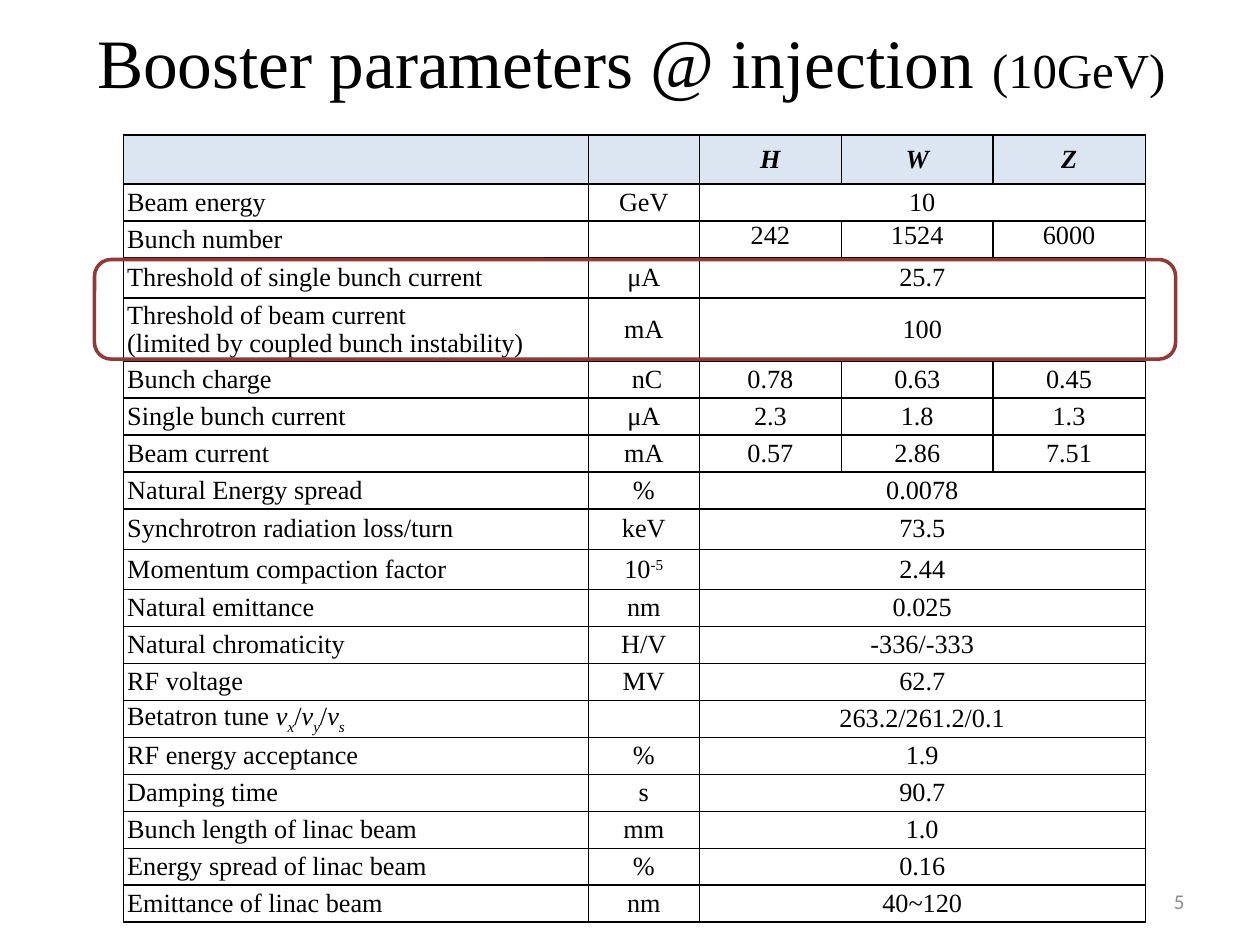
"""Build the slide of booster parameters at injection."""
from lxml import etree
from pptx import Presentation, util as u
from pptx.dml.color import RGBColor
from pptx.enum import shapes, text
from pptx.oxml.ns import qn

BLACK = RGBColor(0, 0, 0)
GREY = RGBColor(0x8C, 0x8C, 0x8C)
PALE = RGBColor(0xDC, 0xE6, 0xF2)
RED = RGBColor(0x95, 0x37, 0x35)
SERIF = "Times New Roman"
MID = text.MSO_ANCHOR.MIDDLE
LEFT, CENTER, RIGHT = text.PP_ALIGN.LEFT, text.PP_ALIGN.CENTER, text.PP_ALIGN.RIGHT

TITLE = [("Booster parameters @ injection ", 39.6), ("(10GeV)", 27.9)]
TUNE = [("Betatron tune ", 0, False)]
for axis, gap in (("x", "/"), ("y", "/"), ("s", "")):
    TUNE += [("ν", 0, True), (axis, -25, True)]
    if gap:
        TUNE.append((gap, 0, False))
POWER = [("10", 0, False), ("-5", 30, False)]

ROWS = [
    ("", "", "H", "W", "Z"),
    ("Beam energy", "GeV", "10"),
    ("Bunch number", "", "242", "1524", "6000"),
    ("Threshold of single bunch current", "μA", "25.7"),
    ("Threshold of beam current\n(limited by coupled bunch instability)", "mA", "100"),
    ("Bunch charge", "\u00a0nC", "0.78", "0.63", "0.45"),
    ("Single bunch current", "μA", "2.3", "1.8", "1.3"),
    ("Beam current", "mA", "0.57", "2.86", "7.51"),
    ("Natural Energy spread", "%", "0.0078"),
    ("Synchrotron radiation loss/turn", "keV", "73.5"),
    ("Momentum compaction factor", POWER, "2.44"),
    ("Natural emittance", "nm", "0.025"),
    ("Natural chromaticity", "H/V", "-336/-333"),
    ("RF voltage", "MV", "62.7"),
    (TUNE, "", "263.2/261.2/0.1"),
    ("RF energy acceptance", "%", "1.9"),
    ("Damping time", "s", "90.7"),
    ("Bunch length of linac beam", "mm", "1.0"),
    ("Energy spread of linac beam", "%", "0.16"),
    ("Emittance of linac beam", "nm", "40~120"),
]
COLS = [3.69, 0.88, 1.13, 1.2, 1.21]
TALL = {0: 0.39, 3: 0.32, 4: 0.49, 9: 0.32, 10: 0.32}
BOX = (0.98, 1.07, sum(COLS), 6.24)
REST = (BOX[3] - sum(TALL.values())) / (len(ROWS) - len(TALL))


def inch(*vals):
    return [u.Inches(v) for v in vals]


def style(font, size, name=SERIF, color=BLACK):
    font.size, font.name = u.Pt(size), name
    font.color.rgb = color


def label(slide, box, runs, align, name, color):
    frame = slide.shapes.add_textbox(*inch(*box)).text_frame
    frame.word_wrap, frame.vertical_anchor = True, MID
    para = frame.paragraphs[0]
    para.alignment = align
    for words, size in runs:
        run = para.add_run()
        run.text = words
        style(run.font, size, name, color)


def border(cell):
    props = cell._tc.get_or_add_tcPr()
    for i, side in enumerate(("lnL", "lnR", "lnT", "lnB")):
        line = etree.Element(qn("a:" + side), w=str(u.Pt(1)))
        fill = etree.SubElement(line, qn("a:solidFill"))
        etree.SubElement(fill, qn("a:srgbClr"), val=str(BLACK))
        props.insert(i, line)


def write(cell, value, align, head):
    frame = cell.text_frame
    if isinstance(value, str):
        frame.text = value
    else:
        for words, base, slant in value:
            run = frame.paragraphs[0].add_run()
            run.text, run.font.italic = words, slant
            if base:
                run.font._element.set("baseline", str(base * 1000))
    for para in frame.paragraphs:
        para.alignment = align
        if not para.runs:
            para._p.get_or_add_endParaRPr().set("sz", "1500")
        for run in para.runs:
            style(run.font, 15)
            if head:
                run.font.bold = run.font.italic = True


def grid(slide):
    table = slide.shapes.add_table(len(ROWS), len(COLS), *inch(*BOX)).table
    for col, wide in zip(table.columns, COLS):
        col.width = u.Inches(wide)
    for r, row in enumerate(ROWS):
        table.rows[r].height = u.Inches(TALL.get(r, REST))
        for c in range(len(COLS)):
            cell = table.cell(r, c)
            cell.margin_left = cell.margin_right = u.Inches(0.03)
            cell.margin_top = cell.margin_bottom = 0
            high = row[0] == "Bunch number" and c > 1
            cell.vertical_anchor = text.MSO_ANCHOR.TOP if high else MID
            if r:
                cell.fill.background()
            else:
                cell.fill.solid()
                cell.fill.fore_color.rgb = PALE
            border(cell)
            write(cell, row[c] if c < len(row) else "", CENTER if c else LEFT, r == 0)
        if len(row) == 3:
            table.cell(r, 2).merge(table.cell(r, 4))


def main():
    deck = Presentation()
    deck.slide_width, deck.slide_height = inch(10, 7.5)
    slide = deck.slides.add_slide(deck.slide_layouts[6])
    label(slide, (0.51, 0.13, 9, 0.71), TITLE, CENTER, SERIF, BLACK)
    grid(slide)
    label(slide, (7.17, 6.95, 2.33, 0.4), [("5", 12)], RIGHT, "Calibri", GREY)
    frame = slide.shapes.add_shape(
        shapes.MSO_SHAPE.ROUNDED_RECTANGLE, *inch(0.75, 2.06, 8.58, 0.79))
    frame.shadow.inherit = False
    frame.fill.background()
    frame.line.color.rgb, frame.line.width = RED, u.Pt(2)
    deck.save("out.pptx")


if __name__ == "__main__":
    main()
